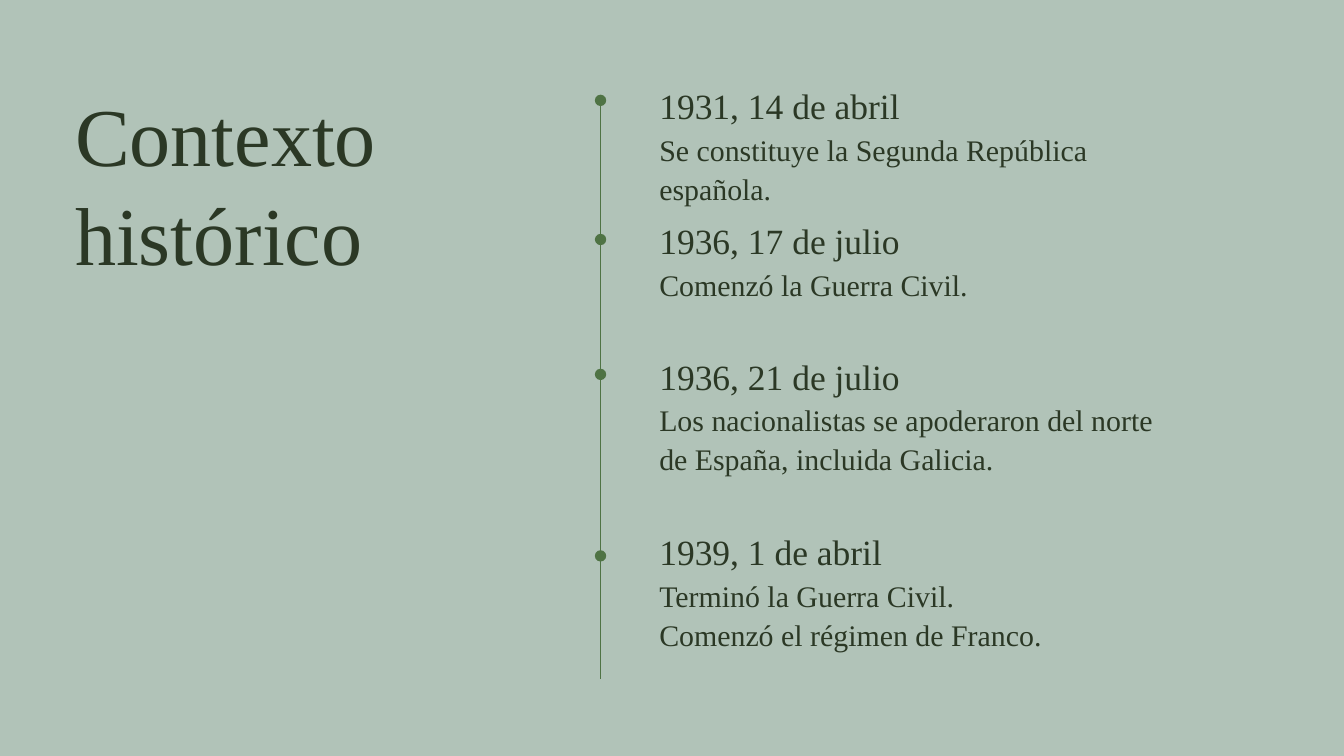
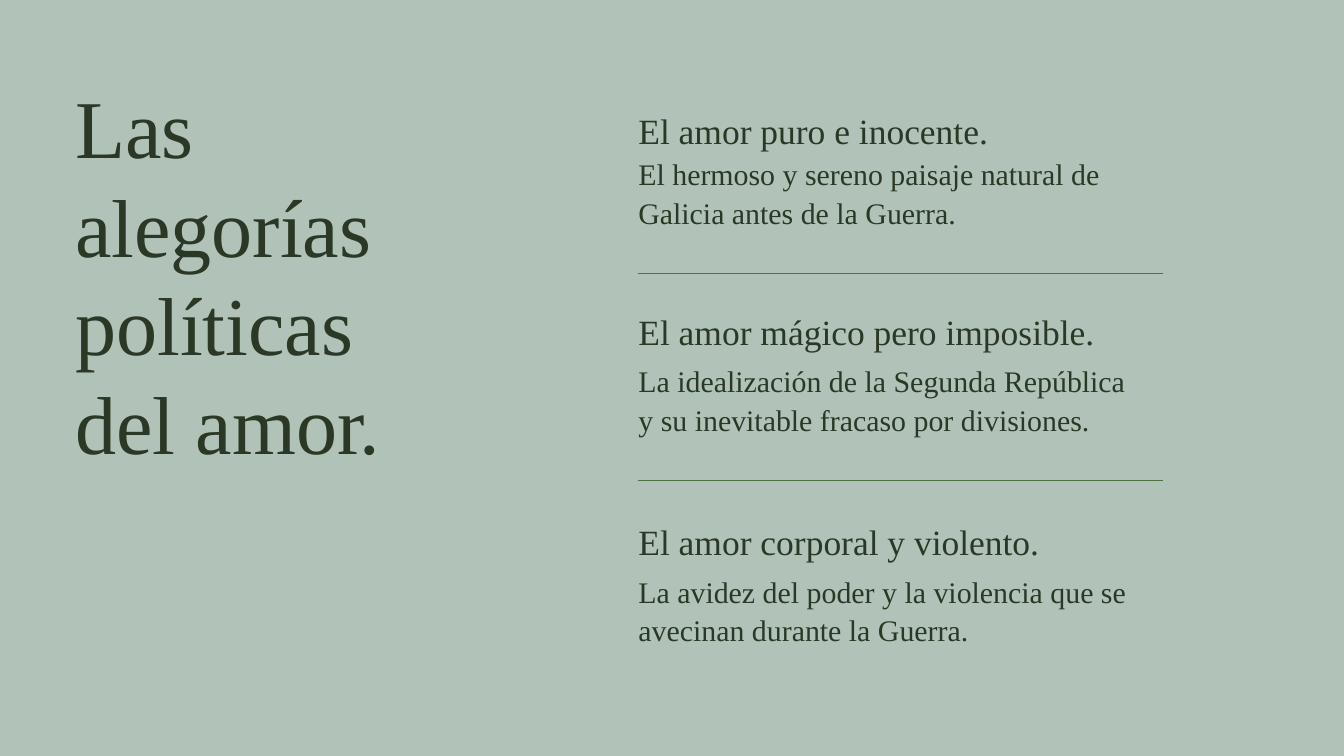
from dataclasses import dataclass

from lxml import etree
from pptx import Presentation
from pptx.dml.color import RGBColor as RGB
from pptx.enum.shapes import MSO_CONNECTOR as CONN, MSO_SHAPE as SHAPE
from pptx.enum.text import MSO_ANCHOR as ANCHOR, MSO_AUTO_SIZE as AUTO, PP_ALIGN as ALIGN
from pptx.oxml.ns import qn
from pptx.util import Cm, Pt


@dataclass(frozen=True)
class TextStyle:
    size: float
    spacing: float


@dataclass(frozen=True)
class Theme:
    font: str = "Times New Roman"
    paper: RGB = RGB(0xB1, 0xC3, 0xB8)
    ink: RGB = RGB(0x2B, 0x38, 0x25)
    accent: RGB = RGB(0x4F, 0x73, 0x44)
    title: TextStyle = TextStyle(88, 105.6)
    heading: TextStyle = TextStyle(38, 45.6)
    body: TextStyle = TextStyle(32, 41.6)


THEME = Theme()
TITLE_LEFT = 2.84
HEADING_W, HEADING_H = 19.02, 1.6
BODY_H = 2.9
DOT = 0.43

EVENTS = [
    (3.18, 3.58, "1931, 14 de abril", "Se constituye la Segunda República española."),
    (8.28, 8.84, "1936, 17 de julio", "Comenzó la Guerra Civil."),
    (13.41, 13.94, "1936, 21 de julio",
     "Los nacionalistas se apoderaron del norte de España, incluida Galicia."),
    (20.04, 20.8, "1939, 1 de abril",
     "Terminó la Guerra Civil.\nComenzó el régimen de Franco."),
]

ALLEGORIES = [
    (4.11, 5.79, "El amor puro e inocente.",
     "El hermoso y sereno paisaje natural de Galicia antes de la Guerra."),
    (11.71, 13.61, "El amor mágico pero imposible.",
     "La idealización de la Segunda República y su inevitable fracaso por divisiones."),
    (19.66, 21.56, "El amor corporal y violento.",
     "La avidez del poder y la violencia que se avecinan durante la Guerra."),
]


def write(s, text, style):
    tf = s.text_frame
    tf.text = text
    tf.word_wrap = True
    tf.auto_size = AUTO.NONE
    tf.vertical_anchor = ANCHOR.TOP
    tf.margin_left = tf.margin_right = tf.margin_top = tf.margin_bottom = 0
    for p in tf.paragraphs:
        p.alignment = ALIGN.LEFT
        p.line_spacing = Pt(style.spacing)
        for r in p.runs:
            r.font.name = THEME.font
            r.font.size = Pt(style.size)
            r.font.color.rgb = THEME.ink


def add_text(slide, left, top, width, height, text, style):
    s = slide.shapes.add_textbox(Cm(left), Cm(top), Cm(width), Cm(height))
    write(s, text, style)


def add_entry(slide, left, top, body_top, heading, body, body_width=HEADING_W):
    add_text(slide, left, top, HEADING_W, HEADING_H, heading, THEME.heading)
    add_text(slide, left, body_top, body_width, BODY_H, body, THEME.body)


def add_line(slide, x1, y1, x2, y2, weight):
    s = slide.shapes.add_connector(CONN.STRAIGHT, Cm(x1), Cm(y1), Cm(x2), Cm(y2))
    s.line.color.rgb = THEME.accent
    s.line.width = Pt(weight)
    etree.SubElement(s._element.spPr, qn("a:effectLst"))


def add_dot(slide, center_x, top):
    s = slide.shapes.add_shape(SHAPE.OVAL, Cm(center_x - DOT / 2), Cm(top), Cm(DOT), Cm(DOT))
    s.shadow.inherit = False
    s.fill.solid()
    s.fill.fore_color.rgb = THEME.accent
    s.line.fill.background()


def add_slide(prs, title, top, width, height):
    slide = prs.slides.add_slide(prs.slide_layouts[5])
    fill = slide.background.fill
    fill.solid()
    fill.fore_color.rgb = THEME.paper
    s = slide.shapes.title
    s.left, s.top, s.width, s.height = Cm(TITLE_LEFT), Cm(top), Cm(width), Cm(height)
    write(s, title, THEME.title)
    return slide


def build_timeline(prs):
    slide = add_slide(prs, "Contexto histórico", 3.2, 13, 7.42)
    axis_x = 22.7
    add_line(slide, axis_x, 3.84, axis_x, 25.68, 1.5)
    for top, dot_top, date, event in EVENTS:
        add_dot(slide, axis_x, dot_top)
        add_entry(slide, 24.92, top, top + 1.68, date, event, 19.91)


def build_allegories(prs):
    slide = add_slide(prs, "Las alegorías políticas\ndel amor.", 2.9, 15.6, 11.15)
    left = 24.13
    for top, body_top, love, meaning in ALLEGORIES:
        add_entry(slide, left, top, body_top, love, meaning)
    for y in (10.34, 18.16):
        add_line(slide, left, y, 43.97, y, 0.75)


def main():
    prs = Presentation()
    prs.slide_width, prs.slide_height = Cm(50.8), Cm(28.58)
    build_timeline(prs)
    build_allegories(prs)
    prs.save("out.pptx")


if __name__ == "__main__":
    main()
